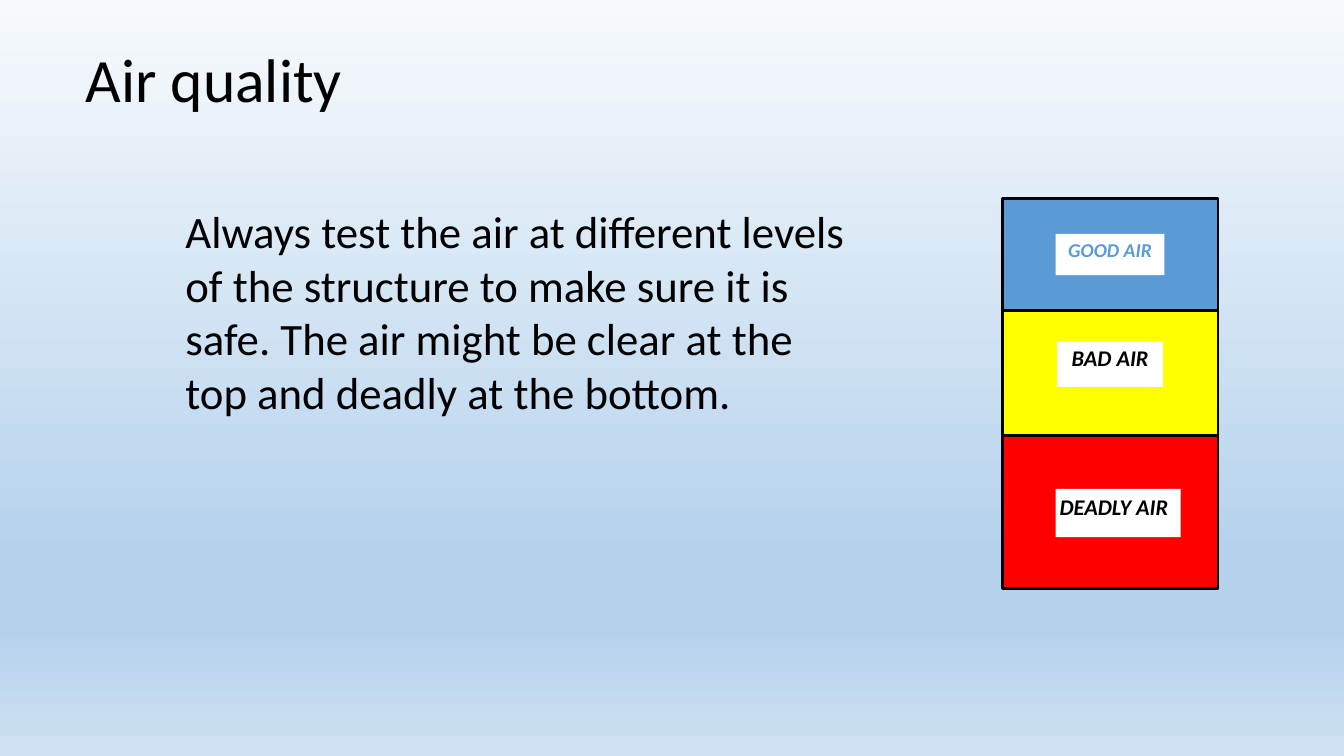
from copy import deepcopy
from dataclasses import dataclass

from pptx import Presentation
from pptx.dml.color import RGBColor
from pptx.enum.shapes import MSO_SHAPE
from pptx.enum.text import MSO_ANCHOR, PP_ALIGN
from pptx.oxml.ns import qn
from pptx.shapes.autoshape import Shape
from pptx.slide import Slide
from pptx.text.text import TextFrame
from pptx.util import Inches, Pt

RECTANGLE = MSO_SHAPE.RECTANGLE
TOP, MIDDLE = MSO_ANCHOR.TOP, MSO_ANCHOR.MIDDLE
LEFT, CENTER = PP_ALIGN.LEFT, PP_ALIGN.CENTER

FONT = "Calibri"
COLORS = {
    "black": "000000",
    "white": "FFFFFF",
    "blue": "5B9BD5",
    "yellow": "FFFF00",
    "red": "FF0000",
}
SKY_STOPS = [(0, "F7FAFD"), (0.74, "B5D2EC"), (0.83, "B5D2EC"), (1, "CEE1F2")]

COLUMN_LEFT, COLUMN_TOP, COLUMN_WIDTH = 9.94, 1.97, 2.14
LABEL_LEFT, LABEL_INSET = 10.47, 0.04


@dataclass(frozen=True)
class AirZone:
    """One band of the air column; label_offset is measured from the band's top."""
    label: str
    fill: str
    height: float
    label_offset: float
    label_width: float
    label_height: float
    label_size: int
    label_color: str = "black"
    label_border: str | None = None
    label_align: PP_ALIGN = CENTER


AIR_ZONES = [
    AirZone("GOOD AIR", "blue", 1.11, 0.35, 1.08, 0.41, 14, label_color="blue"),
    AirZone("BAD AIR", "yellow", 1.24, 0.29, 1.08, 0.48, 16, label_border="yellow"),
    AirZone("DEADLY AIR", "red", 1.52, 0.53, 1.24, 0.48, 16, label_align=LEFT),
]


def paint_background(slide: Slide) -> None:
    fill = slide.background.fill
    fill.gradient()
    fill.gradient_angle = 270
    stop_list = slide.element.find(".//" + qn("a:gsLst"))
    for _ in range(len(SKY_STOPS) - len(stop_list)):
        stop_list.append(deepcopy(stop_list[-1]))
    for stop, (position, color) in zip(fill.gradient_stops, SKY_STOPS):
        stop.position = position
        stop.color.rgb = RGBColor.from_string(color)


def write_text(frame: TextFrame, text: str, size: int, color: str = "black",
               align: PP_ALIGN = LEFT, anchor: MSO_ANCHOR = TOP,
               emphasis: bool = False) -> None:
    """Fill the first paragraph; emphasis means bold italic."""
    frame.word_wrap = True
    frame.vertical_anchor = anchor
    paragraph = frame.paragraphs[0]
    paragraph.alignment = align
    run = paragraph.add_run()
    run.text = text
    run.font.name = FONT
    run.font.size = Pt(size)
    run.font.bold = run.font.italic = emphasis
    run.font.color.rgb = RGBColor.from_string(COLORS[color])


def add_rectangle(slide: Slide, left: float, top: float, width: float, height: float,
                  fill: str, border: str | None) -> Shape:
    rectangle = slide.shapes.add_shape(
        RECTANGLE, Inches(left), Inches(top), Inches(width), Inches(height))
    rectangle.shadow.inherit = False
    rectangle.fill.solid()
    rectangle.fill.fore_color.rgb = RGBColor.from_string(COLORS[fill])
    if border:
        rectangle.line.color.rgb = RGBColor.from_string(COLORS[border])
        rectangle.line.width = Pt(2)
    else:
        rectangle.line.fill.background()
    return rectangle


def add_air_zone(slide: Slide, zone: AirZone, top: float) -> None:
    add_rectangle(slide, COLUMN_LEFT, top, COLUMN_WIDTH, zone.height, zone.fill, "black")
    label = add_rectangle(slide, LABEL_LEFT, top + zone.label_offset, zone.label_width,
                          zone.label_height, "white", zone.label_border)
    frame = label.text_frame
    frame.margin_left = frame.margin_right = Inches(LABEL_INSET)
    frame.margin_top = frame.margin_bottom = Inches(LABEL_INSET)
    write_text(frame, zone.label, zone.label_size, zone.label_color,
               zone.label_align, emphasis=True)


def add_title(slide: Slide, text: str) -> None:
    title = slide.shapes.title
    title.left, title.top = Inches(0.75), Inches(0.19)
    title.width, title.height = Inches(11.33), Inches(1.25)
    write_text(title.text_frame, text, 44, anchor=MIDDLE)
    title.text_frame.paragraphs[0].line_spacing = 0.9


def add_advice(slide: Slide, text: str) -> None:
    advice = slide.shapes.add_textbox(
        Inches(1.74), Inches(1.97), Inches(6.88), Inches(2.26))
    write_text(advice.text_frame, text, 32)


def main() -> None:
    presentation = Presentation()
    presentation.slide_width, presentation.slide_height = Inches(13.33), Inches(7.5)
    slide = presentation.slides.add_slide(
        presentation.slide_layouts.get_by_name("Title Only"))
    paint_background(slide)
    add_title(slide, "Air quality")

    zone_top = COLUMN_TOP
    for zone in AIR_ZONES:
        add_air_zone(slide, zone, zone_top)
        zone_top += zone.height

    add_advice(slide, "Always test the air at different levels of the structure to make "
                      "sure it is safe. The air might be clear at the top and deadly at "
                      "the bottom.")
    presentation.save("out.pptx")


if __name__ == "__main__":
    main()
